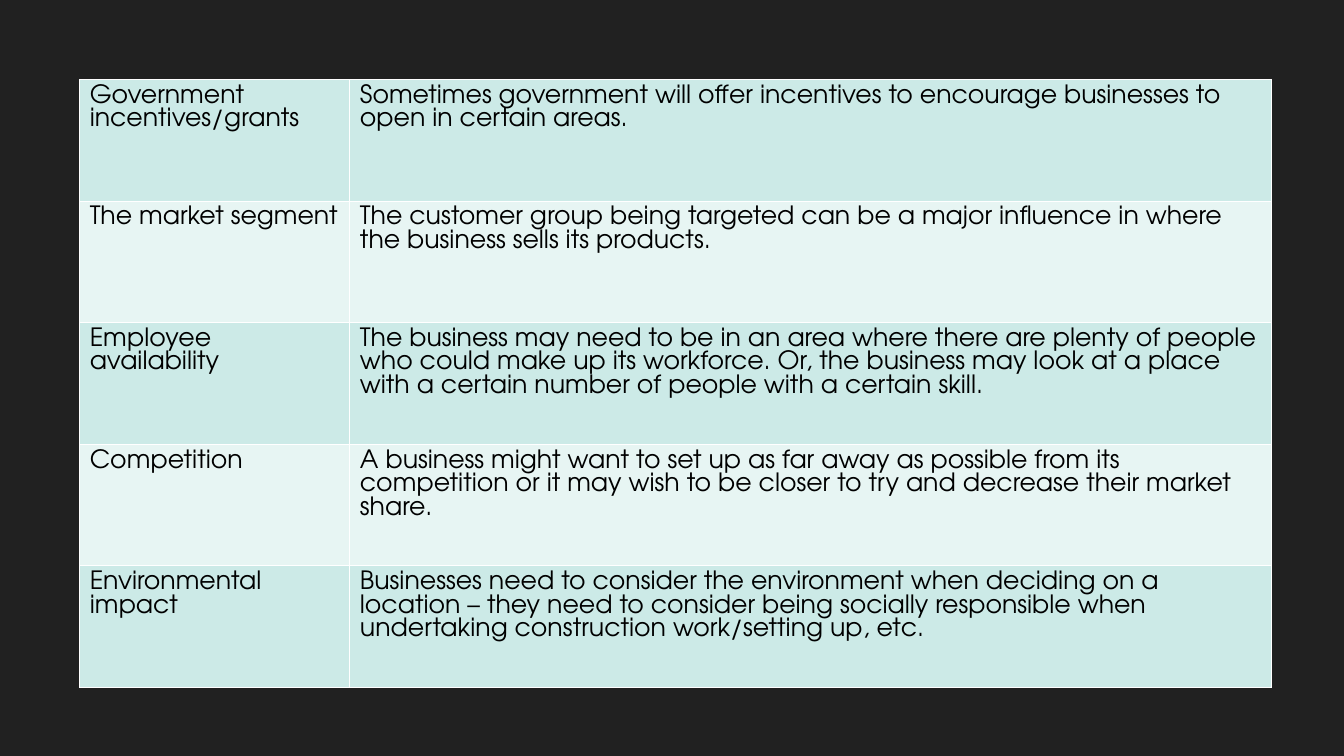
from dataclasses import dataclass

from lxml import etree
from pptx import Presentation
from pptx.dml.color import RGBColor
from pptx.oxml.ns import qn
from pptx.util import Inches, Pt


@dataclass(frozen=True)
class Theme:
    font: str = "TeX Gyre Adventor"
    size: int = 18
    ink: str = "000000"
    back: str = "212121"
    edge: str = "FFFFFF"
    bands: tuple = ("CCEAE7", "E7F5F3")


FACTORS = [
    ("Government incentives/grants",
     "Sometimes government will offer incentives to encourage businesses to "
     "open in certain areas."),
    ("The market segment",
     "The customer group being targeted can be a major influence in where "
     "the business sells its products."),
    ("Employee availability",
     "The business may need to be in an area where there are plenty of people "
     "who could make up its workforce. Or, the business may look at a place "
     "with a certain number of people with a certain skill."),
    ("Competition",
     "A business might want to set up as far away as possible from its "
     "competition or it may wish to be closer to try and decrease their market "
     "share."),
    ("Environmental impact",
     "Businesses need to consider the environment when deciding on a "
     "location – they need to consider being socially responsible when "
     "undertaking construction work/setting up, etc."),
]


class Painter:
    def __init__(self, slide, theme):
        self.slide = slide
        self.theme = theme

    def backdrop(self):
        fill = self.slide.background.fill
        fill.solid()
        fill.fore_color.rgb = RGBColor.from_string(self.theme.back)

    def borders(self, cell):
        """Draw a one-point line on all four sides; call before filling."""
        props = cell._tc.get_or_add_tcPr()
        for side in ("a:lnL", "a:lnR", "a:lnT", "a:lnB"):
            line = etree.SubElement(props, qn(side), w=str(Pt(1)))
            fill = etree.SubElement(line, qn("a:solidFill"))
            etree.SubElement(fill, qn("a:srgbClr"), val=self.theme.edge)

    def cell(self, cell, text, color):
        self.borders(cell)
        cell.fill.solid()
        cell.fill.fore_color.rgb = RGBColor.from_string(color)
        cell.text = text
        font = cell.text_frame.paragraphs[0].font
        font.name = self.theme.font
        font.size = Pt(self.theme.size)
        font.color.rgb = RGBColor.from_string(self.theme.ink)

    def table(self, rows, left, top, widths, height):
        frame = self.slide.shapes.add_table(
            len(rows), len(widths), Inches(left), Inches(top),
            Inches(sum(widths)), Inches(height))
        table = frame.table
        table.first_row = False
        table.horz_banding = False
        for column, width in zip(table.columns, widths):
            column.width = Inches(width)
        for i, row in enumerate(rows):
            color = self.theme.bands[i % len(self.theme.bands)]
            for j, text in enumerate(row):
                self.cell(table.cell(i, j), text, color)


def main():
    deck = Presentation()
    deck.slide_width = Inches(13.33)
    deck.slide_height = Inches(7.5)
    slide = deck.slides.add_slide(deck.slide_layouts[6])
    painter = Painter(slide, Theme())
    painter.backdrop()
    painter.table(FACTORS, 0.79, 0.79, (2.68, 9.14), 6.03)
    deck.save("out.pptx")


if __name__ == "__main__":
    main()
